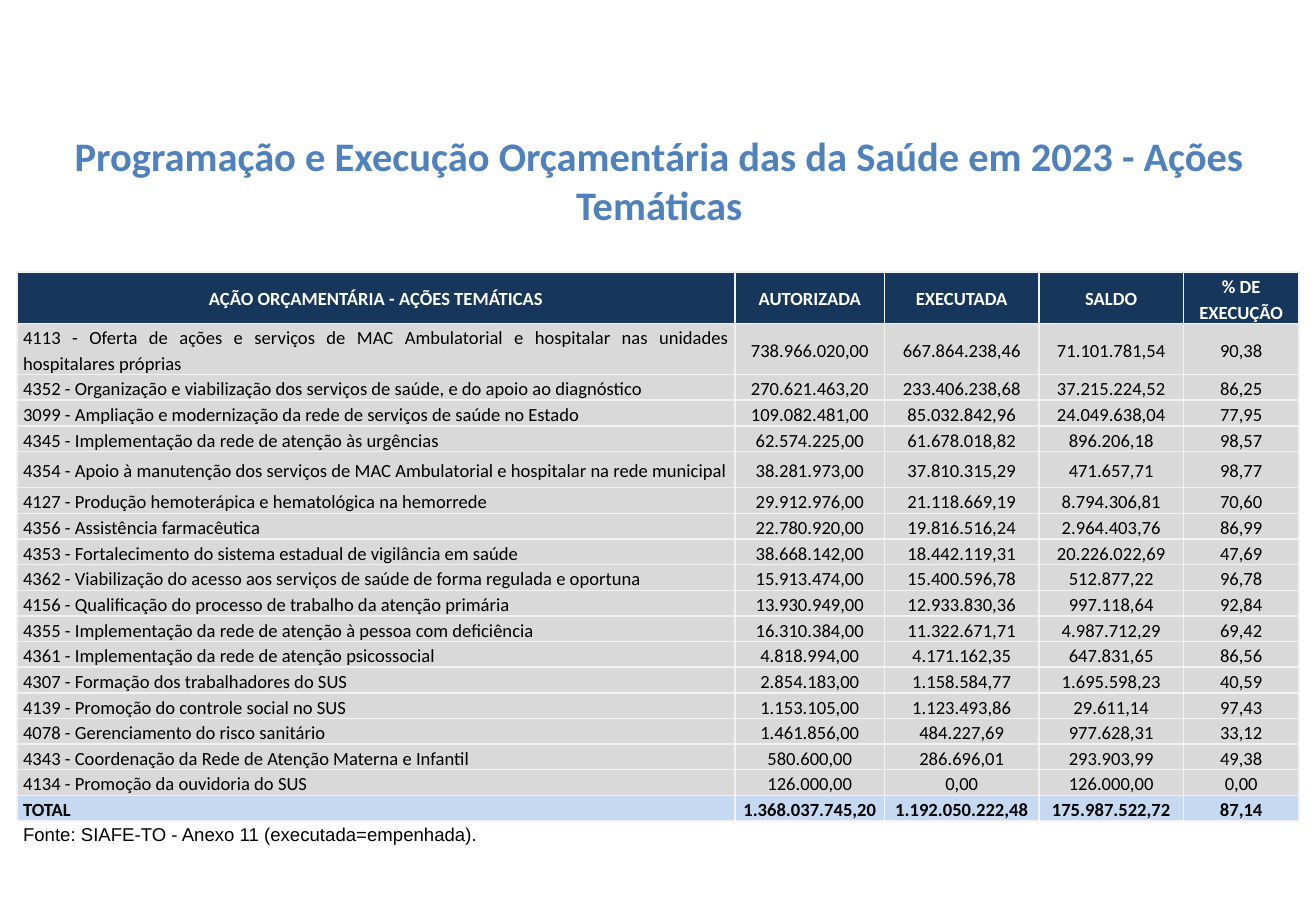
import lxml.etree
import pptx
import pptx.dml.color
import pptx.enum.text
import pptx.oxml
import pptx.oxml.ns
import pptx.util

COLORS = {
    "title": "4F81BD", "white": "FFFFFF", "black": "000000",
    "header": "16365C", "body": "D9D9D9", "total": "C5D9F1", "border": "F2F2F2",
}
ALIGN = pptx.enum.text.PP_ALIGN
ANCHOR = pptx.enum.text.MSO_ANCHOR

TITLE = "Programação e Execução Orçamentária das da Saúde em 2023 - Ações Temáticas"
HEADER = ["AÇÃO ORÇAMENTÁRIA - AÇÕES TEMÁTICAS", "AUTORIZADA", "EXECUTADA", "SALDO", "% DE EXECUÇÃO"]
ACTIONS = [
    ["4113 - Oferta de ações e serviços de MAC Ambulatorial e hospitalar nas unidades hospitalares próprias",
     "738.966.020,00", "667.864.238,46", "71.101.781,54", "90,38"],
    ["4352 - Organização e viabilização dos serviços de saúde, e do apoio ao diagnóstico",
     "270.621.463,20", "233.406.238,68", "37.215.224,52", "86,25"],
    ["3099 - Ampliação e modernização da rede de serviços de saúde no Estado",
     "109.082.481,00", "85.032.842,96", "24.049.638,04", "77,95"],
    ["4345 - Implementação da rede de atenção às urgências",
     "62.574.225,00", "61.678.018,82", "896.206,18", "98,57"],
    ["4354 - Apoio à manutenção dos serviços de MAC Ambulatorial e hospitalar na rede municipal",
     "38.281.973,00", "37.810.315,29", "471.657,71", "98,77"],
    ["4127 - Produção hemoterápica e hematológica na hemorrede",
     "29.912.976,00", "21.118.669,19", "8.794.306,81", "70,60"],
    ["4356 - Assistência farmacêutica",
     "22.780.920,00", "19.816.516,24", "2.964.403,76", "86,99"],
    ["4353 - Fortalecimento do sistema estadual de vigilância em saúde",
     "38.668.142,00", "18.442.119,31", "20.226.022,69", "47,69"],
    ["4362 - Viabilização do acesso aos serviços de saúde de forma regulada e oportuna",
     "15.913.474,00", "15.400.596,78", "512.877,22", "96,78"],
    ["4156 - Qualificação do processo de trabalho da atenção primária",
     "13.930.949,00", "12.933.830,36", "997.118,64", "92,84"],
    ["4355 - Implementação da rede de atenção à pessoa com deficiência",
     "16.310.384,00", "11.322.671,71", "4.987.712,29", "69,42"],
    ["4361 - Implementação da rede de atenção psicossocial",
     "4.818.994,00", "4.171.162,35", "647.831,65", "86,56"],
    ["4307 - Formação dos trabalhadores do SUS",
     "2.854.183,00", "1.158.584,77", "1.695.598,23", "40,59"],
    ["4139 - Promoção do controle social no SUS",
     "1.153.105,00", "1.123.493,86", "29.611,14", "97,43"],
    ["4078 - Gerenciamento do risco sanitário",
     "1.461.856,00", "484.227,69", "977.628,31", "33,12"],
    ["4343 - Coordenação da Rede de Atenção Materna e Infantil",
     "580.600,00", "286.696,01", "293.903,99", "49,38"],
    ["4134 - Promoção da ouvidoria do SUS",
     "126.000,00", "0,00", "126.000,00", "0,00"],
]
TOTAL = ["TOTAL", "1.368.037.745,20", "1.192.050.222,48", "175.987.522,72", "87,14"]
SOURCE = ["Fonte: SIAFE-TO - Anexo 11 (executada=empenhada).", "", "", "", ""]

# Column widths in percent of the slide; row heights in single text lines
COLUMNS = [54.57, 11.36, 11.73, 10.99, 8.77]
LINES = [2, 2, 1, 1, 1, 1.42] + [1] * 14


def rgb(name):
    return pptx.dml.color.RGBColor.from_string(COLORS[name])


def write(frame, text, *, size=11, font="Calibri", color="black", bold=False,
          align=ALIGN.CENTER, spacing=None):
    """Put one formatted paragraph into a text frame."""
    para = frame.paragraphs[0]
    para.alignment = align
    para.line_spacing = spacing
    if not text:
        # An empty cell keeps the height of its row's text
        end = lxml.etree.SubElement(para._p, pptx.oxml.ns.qn("a:endParaRPr"))
        end.set("sz", str(size * 100))
        return
    span = para.add_run()
    span.text = text
    span.font.size = pptx.util.Pt(size)
    span.font.name = font
    span.font.bold = bold
    span.font.color.rgb = rgb(color)


class Page:
    """The current slide, measured in percent of its width and height."""

    def __init__(self, deck):
        self.deck = deck
        self.slide = deck.slides.add_slide(deck.slide_layouts[5])

    def across(self, share):
        return round(self.deck.slide_width * share / 100)

    def down(self, share):
        return round(self.deck.slide_height * share / 100)

    def title(self, text, left, top, width, height):
        box = self.slide.shapes.title
        box.left, box.top = self.across(left), self.down(top)
        box.width, box.height = self.across(width), self.down(height)
        box.fill.solid()
        box.fill.fore_color.rgb = rgb("white")
        frame = box.text_frame
        frame.word_wrap = True
        frame.auto_size = pptx.enum.text.MSO_AUTO_SIZE.SHAPE_TO_FIT_TEXT
        frame.vertical_anchor = ANCHOR.TOP
        write(frame, text, size=24, color="title", bold=True)

    def table(self, rows, left, top, height):
        grid = self.slide.shapes.add_table(
            len(rows), len(COLUMNS), self.across(left), self.down(top),
            self.across(sum(COLUMNS)), self.down(height)).table
        grid.first_row = grid.horz_banding = False
        for column, share in zip(grid.columns, COLUMNS):
            column.width = self.across(share)
        for row, lines in zip(grid.rows, LINES):
            row.height = self.down(height * lines / sum(LINES))
        for row, (texts, fill, style) in zip(grid.rows, rows):
            for index, (cell, text) in enumerate(zip(row.cells, texts)):
                justified = index == 0 and fill != "header"
                self.cell(cell, text, fill, spacing=1.15,
                          align=ALIGN.JUSTIFY if justified else ALIGN.CENTER, **style)

    def cell(self, cell, text, fill, **style):
        cell.margin_left = cell.margin_right = pptx.util.Inches(0.05)
        cell.margin_top = cell.margin_bottom = 0
        cell.vertical_anchor = ANCHOR.MIDDLE
        write(cell.text_frame, text, **style)
        if fill:
            cell.fill.solid()
            cell.fill.fore_color.rgb = rgb(fill)
        else:
            cell.fill.background()
        self.borders(cell, "LRTB" if fill else "T")

    def borders(self, cell, sides):
        properties = cell._tc.get_or_add_tcPr()
        for place, side in enumerate(sides):
            properties.insert(place, pptx.oxml.parse_xml(
                f'<a:ln{side} {pptx.oxml.ns.nsdecls("a")} w="12700"><a:solidFill>'
                f'<a:srgbClr val="{COLORS["border"]}"/></a:solidFill></a:ln{side}>'))


def main():
    deck = pptx.Presentation()
    deck.slide_width = pptx.util.Inches(10.83)
    deck.slide_height = pptx.util.Inches(7.5)
    page = Page(deck)

    # Title
    page.title(TITLE, 0, 13.73, 100.18, 12.13)

    # Budget table: header, actions, total and source line
    rows = [(HEADER, "header", {"color": "white", "bold": True})]
    rows += [(action, "body", {}) for action in ACTIONS]
    rows += [(TOTAL, "total", {"bold": True}), (SOURCE, None, {"font": "Arial"})]
    page.table(rows, 1.29, 29.87, 62.93)

    deck.save("out.pptx")


if __name__ == "__main__":
    main()
